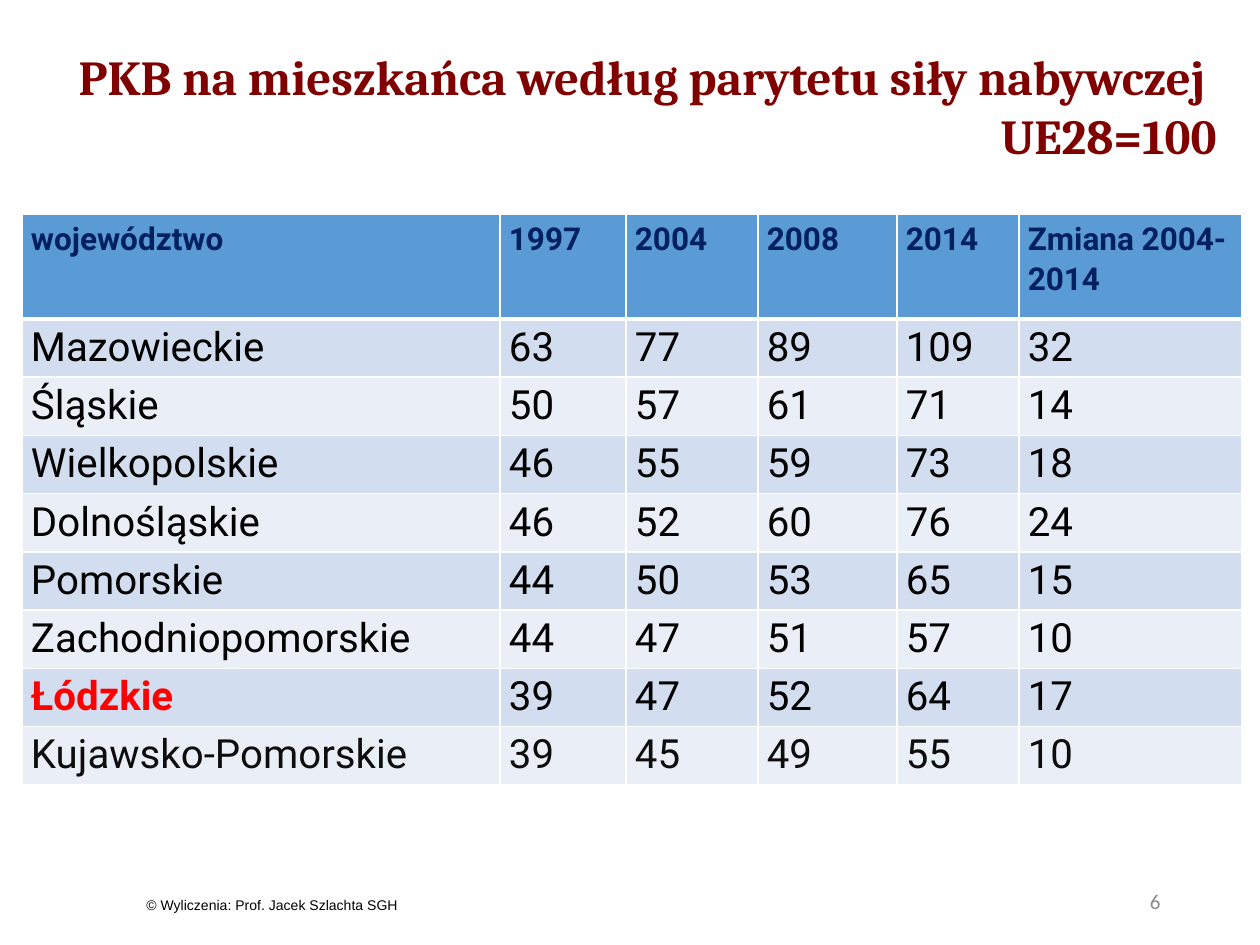
from dataclasses import dataclass

from lxml import etree
from pptx import Presentation
from pptx.dml.color import RGBColor
from pptx.enum.text import MSO_ANCHOR, PP_ALIGN
from pptx.oxml.ns import qn
from pptx.util import Emu, Pt

EMU_PER_PX = 914400 / 126
LEFT, RIGHT = PP_ALIGN.LEFT, PP_ALIGN.RIGHT
TOP, MIDDLE = MSO_ANCHOR.TOP, MSO_ANCHOR.MIDDLE

MAROON = RGBColor(0x80, 0x00, 0x00)
NAVY = RGBColor(0x00, 0x20, 0x60)
BLACK = RGBColor(0x00, 0x00, 0x00)
NEAR_BLACK = RGBColor(0x0D, 0x0D, 0x0D)
RED = RGBColor(0xFF, 0x00, 0x00)
GRAY = RGBColor(0x8C, 0x8C, 0x8C)
WHITE = RGBColor(0xFF, 0xFF, 0xFF)
HEADER_BLUE = RGBColor(0x5B, 0x9B, 0xD5)
BANDS = (RGBColor(0xD2, 0xDE, 0xEF), RGBColor(0xEA, 0xEF, 0xF7))

TABLE_LEFT, TABLE_TOP = 22, 214
COLUMN_WIDTHS = (478, 126, 132, 139, 122, 223)
HEADER_HEIGHT, BODY_HEIGHT = 105, 461
CELL_MARGIN_X, CELL_MARGIN_Y = 9, 5

HEADINGS = ("województwo", "1997", "2004", "2008", "2014", "Zmiana 2004-2014")
REGIONS = (
    ("Mazowieckie", 63, 77, 89, 109, 32),
    ("Śląskie", 50, 57, 61, 71, 14),
    ("Wielkopolskie", 46, 55, 59, 73, 18),
    ("Dolnośląskie", 46, 52, 60, 76, 24),
    ("Pomorskie", 44, 50, 53, 65, 15),
    ("Zachodniopomorskie", 44, 47, 51, 57, 10),
    ("Łódzkie", 39, 47, 52, 64, 17),
    ("Kujawsko-Pomorskie", 39, 45, 49, 55, 10),
)


@dataclass(frozen=True)
class TextStyle:
    font: str
    size: float
    color: RGBColor
    bold: bool = False


@dataclass(frozen=True)
class TextBlock:
    left: int
    top: int
    width: int
    height: int
    lines: tuple[str, ...]
    style: TextStyle
    align: PP_ALIGN = RIGHT
    anchor: MSO_ANCHOR = MIDDLE
    wrap: bool = True


HEADER_STYLE = TextStyle("Roboto", 18, NAVY, True)
BODY_STYLE = TextStyle("Roboto", 23, BLACK)
HIGHLIGHT_STYLE = TextStyle("Roboto", 23, RED, True)
LAST_ROW_STYLE = TextStyle("Roboto", 23, NEAR_BLACK)

TITLE = TextBlock(
    22, 26, 1207, 159,
    ("PKB na mieszkańca według parytetu siły nabywczej ", "UE28=100"),
    TextStyle("Cambria", 27.9, MAROON, True),
)
PAGE_NUMBER = TextBlock(890, 876, 283, 50, ("6",), TextStyle("Calibri", 12, GRAY))
CREDIT = TextBlock(
    134, 890, 287, 30, ("© Wyliczenia: Prof. Jacek Szlachta SGH",),
    TextStyle("Arial", 8, BLACK), LEFT, TOP, wrap=False,
)


def px(length: int) -> Emu:
    return Emu(round(length * EMU_PER_PX))


def add_run(para, text: str, style: TextStyle) -> None:
    run = para.add_run()
    run.text = text
    run.font.name = style.font
    run.font.size = Pt(style.size)
    run.font.bold = style.bold
    run.font.color.rgb = style.color


def add_text(page, block: TextBlock) -> None:
    box = page.shapes.add_textbox(
        px(block.left), px(block.top), px(block.width), px(block.height))
    frame = box.text_frame
    frame.word_wrap = block.wrap
    frame.vertical_anchor = block.anchor
    for index, line in enumerate(block.lines):
        para = frame.add_paragraph() if index else frame.paragraphs[0]
        para.alignment = block.align
        add_run(para, line, block.style)


def set_borders(cell, bottom_width: int) -> None:
    """Put white borders on a cell, before its fill as the schema requires."""
    properties = cell._tc.get_or_add_tcPr()
    widths = {"a:lnL": 1, "a:lnR": 1, "a:lnT": 1, "a:lnB": bottom_width}
    for position, (tag, width) in enumerate(widths.items()):
        line = etree.Element(qn(tag), w=str(Pt(width)))
        fill = etree.SubElement(line, qn("a:solidFill"))
        etree.SubElement(fill, qn("a:srgbClr"), val=str(WHITE))
        properties.insert(position, line)


def fill_cell(cell, text: str, style: TextStyle, color: RGBColor,
              bottom_width: int = 1, line_spacing: float = 1.0) -> None:
    cell.fill.solid()
    cell.fill.fore_color.rgb = color
    cell.margin_left = cell.margin_right = px(CELL_MARGIN_X)
    cell.margin_top = cell.margin_bottom = px(CELL_MARGIN_Y)
    set_borders(cell, bottom_width)
    para = cell.text_frame.paragraphs[0]
    para.line_spacing = line_spacing
    add_run(para, text, style)


def region_style(row: int, column: int) -> TextStyle:
    if row == len(REGIONS) - 1:
        return LAST_ROW_STYLE
    if column == 0 and REGIONS[row][0] == "Łódzkie":
        return HIGHLIGHT_STYLE
    return BODY_STYLE


def add_region_table(page) -> None:
    table = page.shapes.add_table(
        len(REGIONS) + 1, len(HEADINGS), px(TABLE_LEFT), px(TABLE_TOP),
        px(sum(COLUMN_WIDTHS)), px(HEADER_HEIGHT + BODY_HEIGHT)).table
    table.first_row = table.horz_banding = False
    for column, width in zip(table.columns, COLUMN_WIDTHS):
        column.width = px(width)
    table.rows[0].height = px(HEADER_HEIGHT)
    for column, heading in enumerate(HEADINGS):
        fill_cell(table.cell(0, column), heading, HEADER_STYLE, HEADER_BLUE,
                  bottom_width=3, line_spacing=1.07)
    for row, region in enumerate(REGIONS):
        table.rows[row + 1].height = Emu(px(BODY_HEIGHT) // len(REGIONS))
        for column, value in enumerate(region):
            fill_cell(table.cell(row + 1, column), str(value),
                      region_style(row, column), BANDS[row % 2])


def main() -> None:
    deck = Presentation()
    deck.slide_width, deck.slide_height = px(1260), px(945)
    page = deck.slides.add_slide(deck.slide_layouts[6])
    add_text(page, TITLE)
    add_region_table(page)
    add_text(page, PAGE_NUMBER)
    add_text(page, CREDIT)
    deck.save("out.pptx")


if __name__ == "__main__":
    main()
